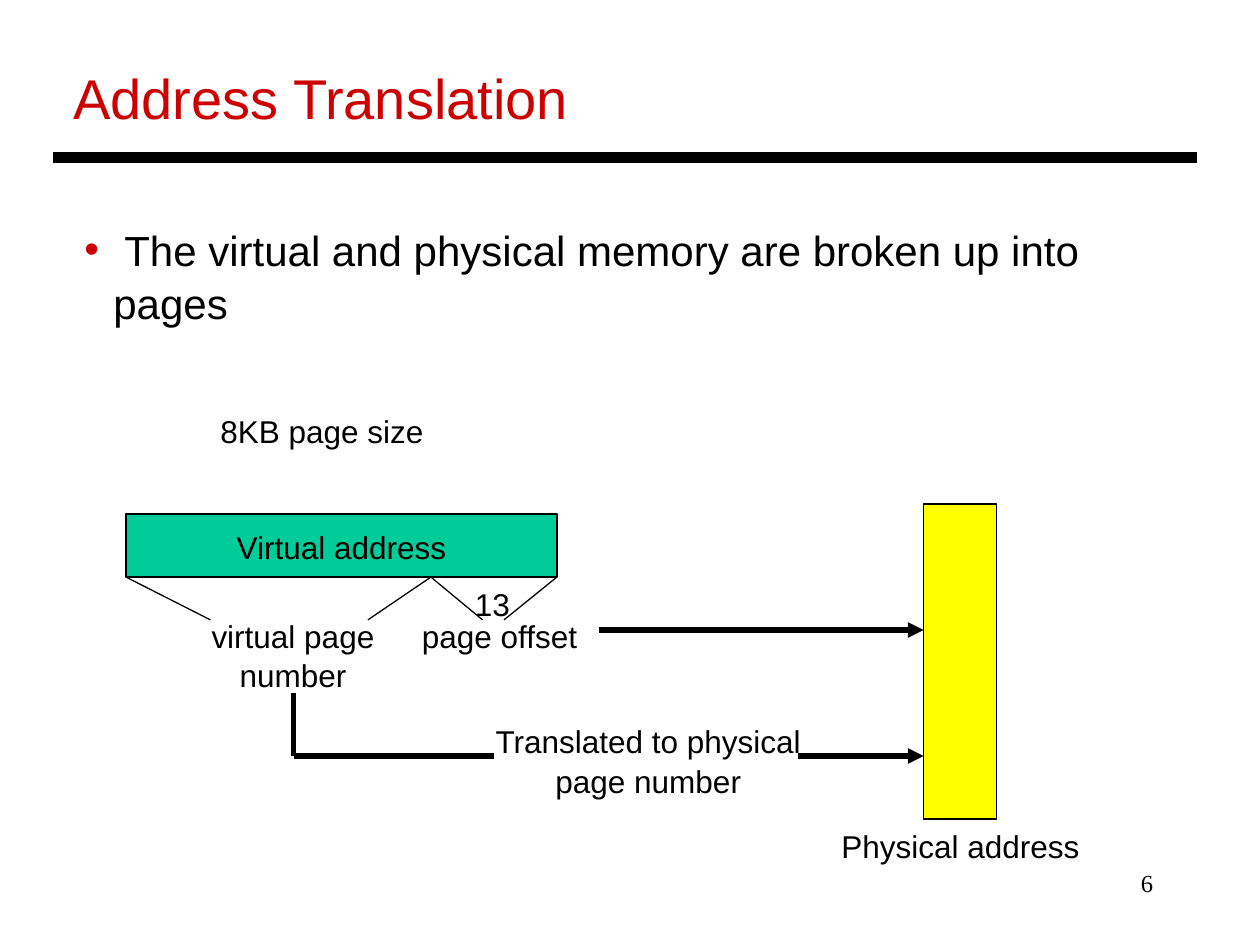
from lxml import etree
from pptx import Presentation
from pptx.dml.color import RGBColor
from pptx.enum.shapes import MSO_CONNECTOR, MSO_SHAPE
from pptx.enum.text import MSO_ANCHOR, MSO_AUTO_SIZE, PP_ALIGN
from pptx.oxml.ns import qn
from pptx.util import Inches, Pt

BLACK, RED, GREEN, YELLOW = "000000", "CC0000", "00CC99", "FFFF00"
LEFT, CENTER, RIGHT = PP_ALIGN.LEFT, PP_ALIGN.CENTER, PP_ALIGN.RIGHT


def color(hex_value):
    return RGBColor.from_string(hex_value)


class Page:
    """The current slide and the style of its elements."""

    font, size, spacing = "Arial", 18, 1.05
    thin, thick = 0.75, 3

    def __init__(self, slide):
        self.slide = slide

    def place(self, box, left, top, width, height):
        box.left, box.top = Inches(left), Inches(top)
        box.width, box.height = Inches(width), Inches(height)

    def set_text(self, box, text, size=None, ink=BLACK, align=LEFT,
                 anchor=MSO_ANCHOR.TOP, font=None, wrap=False):
        frame = box.text_frame
        frame.text = text
        frame.word_wrap = wrap
        frame.auto_size = MSO_AUTO_SIZE.NONE
        frame.vertical_anchor = anchor
        for para in frame.paragraphs:
            para.alignment = align
            para.line_spacing = self.spacing
            para.space_before = Pt(0)
            for span in para.runs:
                span.font.name = font or self.font
                span.font.size = Pt(size or self.size)
                span.font.color.rgb = color(ink)

    def title(self, text, *area):
        box = self.slide.shapes.title
        self.place(box, *area)
        self.set_text(box, text, size=32, ink=RED)

    def bullet(self, text, *area):
        box = self.slide.placeholders[1]
        self.place(box, *area)
        self.set_text(box, text, size=24, wrap=True)
        props = box.text_frame.paragraphs[0]._p.get_or_add_pPr()
        props.set("marL", str(Inches(0.23)))
        props.set("indent", str(-Inches(0.23)))
        bullet_color = etree.SubElement(props, qn("a:buClr"))
        etree.SubElement(bullet_color, qn("a:srgbClr"), val=RED)
        etree.SubElement(props, qn("a:buChar"), char="•")

    def label(self, text, left, top, width, height=0.4, **style):
        box = self.slide.shapes.add_textbox(
            Inches(left), Inches(top), Inches(width), Inches(height))
        self.set_text(box, text, **style)

    def block(self, left, top, width, height, fill, text=""):
        box = self.slide.shapes.add_shape(
            MSO_SHAPE.RECTANGLE, Inches(left), Inches(top),
            Inches(width), Inches(height))
        box.shadow.inherit = False
        box.fill.solid()
        box.fill.fore_color.rgb = color(fill)
        box.line.color.rgb = color(BLACK)
        box.line.width = Pt(self.thin)
        if text:
            self.set_text(box, text, align=CENTER, anchor=MSO_ANCHOR.MIDDLE)

    def line(self, start, end, width, arrow=False):
        points = [Inches(value) for value in (*start, *end)]
        line = self.slide.shapes.add_connector(MSO_CONNECTOR.STRAIGHT, *points)
        line.line.color.rgb = color(BLACK)
        line.line.width = Pt(width)
        if arrow:
            outline = line.line._get_or_add_ln()
            etree.SubElement(outline, qn("a:tailEnd"), type="triangle")
        etree.SubElement(line._element.spPr, qn("a:effectLst"))


def main():
    deck = Presentation()
    deck.slide_width, deck.slide_height = Inches(10), Inches(7.5)
    page = Page(deck.slides.add_slide(deck.slide_layouts[1]))

    page.label("6", 7.17, 6.83, 2.08, 0.5, size=14, align=RIGHT,
               font="Times New Roman")
    page.title("Address Translation", 0.48, 0.43, 4.15, 0.63)
    page.line((0.42, 1.25), (9.5, 1.25), 6)
    page.bullet(" The virtual and physical memory are broken up into pages",
                0.57, 1.71, 8.99, 0.95)

    page.label("8KB page size", 1.65, 3.21, 1.81)
    page.block(1, 4.08, 3.42, 0.5, GREEN, "Virtual address")

    # Each field of the address narrows down to its label.
    for edge, tip in ((1, 1.67), (3.42, 2.92), (3.42, 3.83), (4.42, 4)):
        page.line((edge, 4.58), (tip, 4.92), page.thin)
    page.label("virtual page\nnumber", 1.58, 4.83, 1.49, 0.7, align=CENTER)
    page.label("page offset", 3.25, 4.83, 1.44)
    page.label("13", 3.67, 4.58, 0.48)

    page.line((2.33, 5.5), (2.33, 6), page.thick)
    page.line((2.33, 6), (3.92, 6), page.thick)
    page.label("Translated to physical\npage number", 3.83, 5.67, 2.63, 0.7,
               align=CENTER)
    page.line((6.33, 6), (7.33, 6), page.thick, arrow=True)
    page.line((4.75, 5), (7.33, 5), page.thick, arrow=True)

    page.block(7.33, 4, 0.58, 2.5, YELLOW)
    page.label("Physical address", 6.58, 6.5, 2.09)

    deck.save("out.pptx")


if __name__ == "__main__":
    main()
